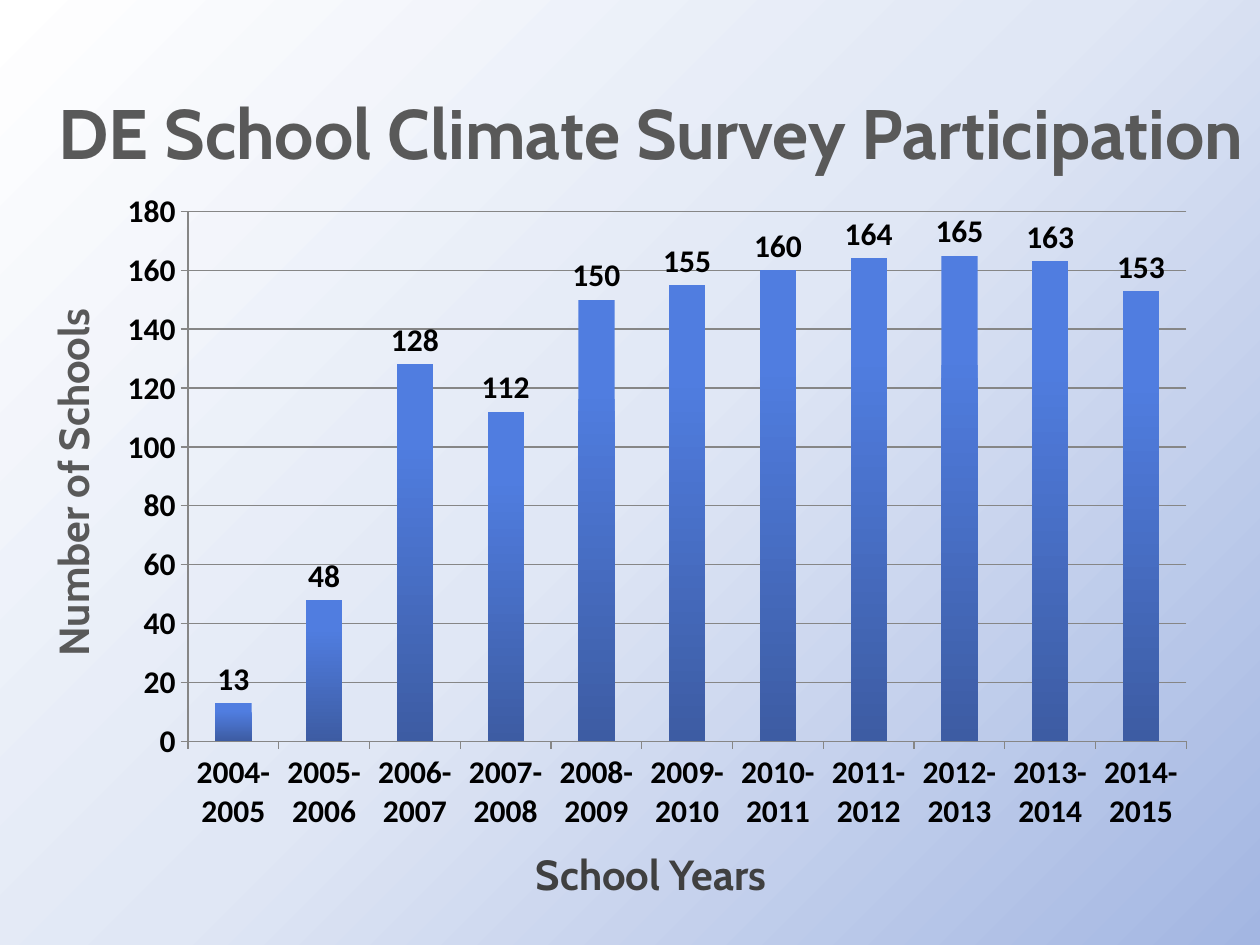
from pptx import Presentation
from pptx.chart.data import CategoryChartData
from pptx.dml.color import RGBColor
from pptx.enum.chart import XL_CHART_TYPE as CT, XL_LABEL_POSITION as LP, XL_TICK_MARK as TM
from pptx.enum.text import MSO_ANCHOR as ANCHOR, MSO_AUTO_SIZE as AUTO, PP_ALIGN as ALIGN
from pptx.oxml import parse_xml
from pptx.oxml.ns import nsdecls
from pptx.util import Cm, Pt

SCHOOLS = [13, 48, 128, 112, 150, 155, 160, 164, 165, 163, 153]
YEARS = [f"{y}-{y + 1}" for y in range(2004, 2004 + len(SCHOOLS))]
BACKGROUND = [(0, "A3B6E2"), (50, "E0E7F5"), (100, "FFFFFF")]


def rgb(value):
    """Turn a hex string into a colour."""
    return RGBColor.from_string(value)


def style(font, name, size, color, bold=True):
    """Set the face, size, colour and weight of a font."""
    font.name, font.size, font.bold = name, Pt(size), bold
    font.color.rgb = rgb(color)


def add_background(s):
    """Fill the slide with a gradient that spreads from the lower right corner."""
    stops = "".join(
        f'<a:gs pos="{pos * 1000}"><a:srgbClr val="{color}"/></a:gs>'
        for pos, color in BACKGROUND
    )
    bg = parse_xml(
        f'<p:bg {nsdecls("p", "a")}><p:bgPr><a:gradFill rotWithShape="1">'
        f'<a:gsLst>{stops}</a:gsLst><a:path path="circle">'
        '<a:fillToRect l="100000" t="100000"/></a:path></a:gradFill>'
        "<a:effectLst/></p:bgPr></p:bg>"
    )
    s._element.cSld.insert(0, bg)


def set_title(s, text, x, y, w, h):
    """Place and format the title placeholder."""
    sp = s.shapes.title
    sp.left, sp.top, sp.width, sp.height = Cm(x), Cm(y), Cm(w), Cm(h)
    tf = sp.text_frame
    tf.text = text
    tf.word_wrap, tf.auto_size, tf.vertical_anchor = True, AUTO.NONE, ANCHOR.TOP
    p = tf.paragraphs[0]
    p.alignment, p.line_spacing = ALIGN.CENTER, 1.5
    pPr = p._p.get_or_add_pPr()
    pPr.set("marL", str(Cm(0.76)))
    pPr.set("indent", str(-Cm(0.76)))
    style(p.font, "Cabin", 40, "595959")


def add_axis_title(s, text, color, x, y, w, h, rotation=0):
    """Add a centred caption for one axis of the chart."""
    sp = s.shapes.add_textbox(Cm(x), Cm(y), Cm(w), Cm(h))
    sp.rotation = rotation
    tf = sp.text_frame
    tf.word_wrap = True
    p = tf.paragraphs[0]
    p.text, p.alignment = text, ALIGN.CENTER
    style(p.font, "Cabin", 24, color)


def add_participation_chart(s, x, y, w, h):
    """Add the column chart of schools per school year."""
    data = CategoryChartData()
    data.categories = YEARS
    data.add_series("Series 1", SCHOOLS)
    chart = s.shapes.add_chart(
        CT.COLUMN_CLUSTERED, Cm(x), Cm(y), Cm(w), Cm(h), data
    ).chart
    chart.has_legend = chart.has_title = False
    style(chart.font, "Calibri", 18, "000000")

    for axis in (chart.category_axis, chart.value_axis):
        axis.major_tick_mark, axis.minor_tick_mark = TM.OUTSIDE, TM.NONE
        axis.format.line.color.rgb = rgb("868686")
        style(axis.tick_labels.font, "Calibri", 18, "000000")
    axis = chart.value_axis
    axis.minimum_scale, axis.maximum_scale, axis.major_unit = 0, 180, 20
    axis.has_major_gridlines = True
    axis.major_gridlines.format.line.color.rgb = rgb("868686")

    plot = chart.plots[0]
    plot.gap_width, plot.vary_by_categories = 150, False
    plot.has_data_labels = True
    labels = plot.data_labels
    labels.show_value, labels.position = True, LP.OUTSIDE_END
    style(labels.font, "Calibri", 18, "000000")

    fill = plot.series[0].format.fill
    fill.gradient()
    fill.gradient_angle = 270
    for stop, pos, color in zip(fill.gradient_stops, (0.2, 1), ("507DE0", "3D5CA3")):
        stop.position, stop.color.rgb = pos, rgb(color)


def main():
    """Build the slide and save it."""
    prs = Presentation()
    prs.slide_width, prs.slide_height = Cm(25.4), Cm(19.05)
    s = prs.slides.add_slide(prs.slide_layouts[5])
    add_background(s)
    set_title(s, "DE School Climate Survey Participation", 0.84, 0.84, 24.56, 4.37)
    add_axis_title(s, "Number of Schools", "595959", -4.17, 9.09, 11.28, 1.27, 270)
    add_axis_title(s, "School Years", "404040", 7.7, 16.99, 10.85, 1.27)
    add_participation_chart(s, 2.13, 3.61, 22.23, 13.39)
    prs.save("out.pptx")


if __name__ == "__main__":
    main()
